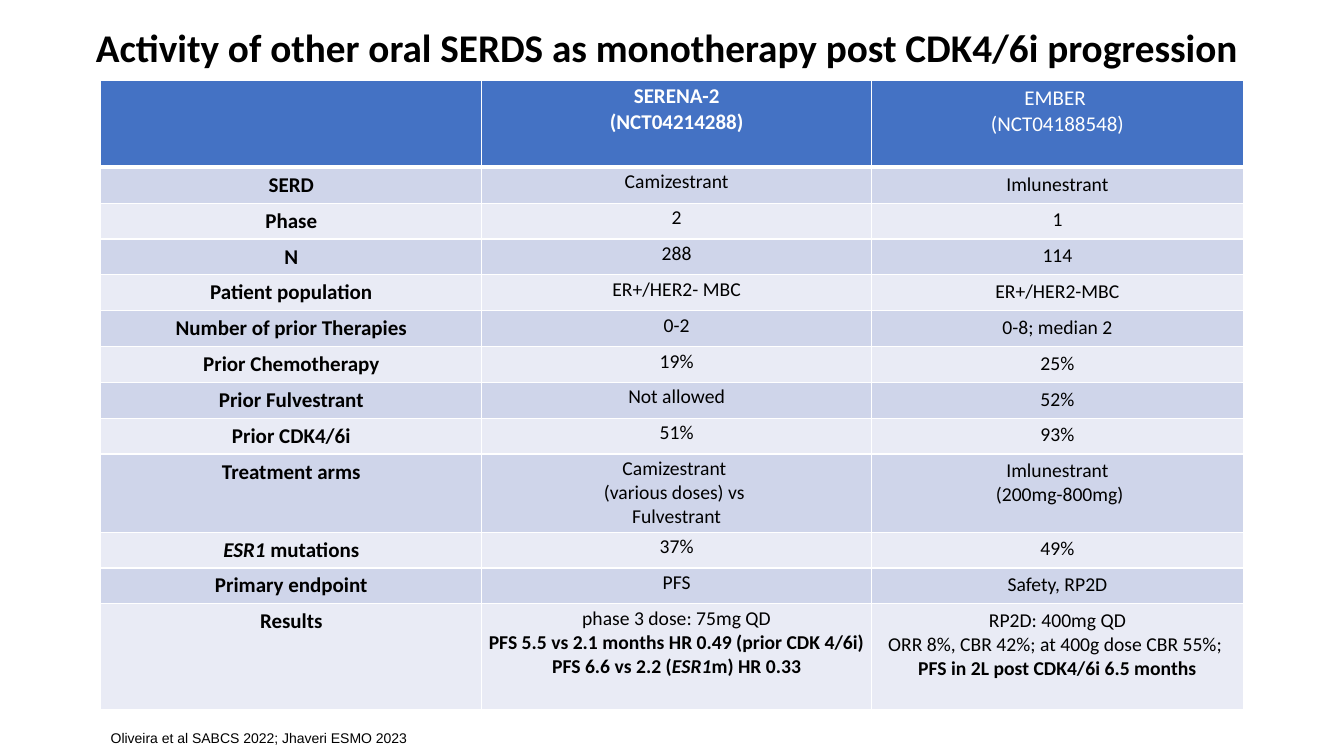
from lxml.etree import SubElement
from pptx import Presentation
from pptx.dml.color import RGBColor
from pptx.enum.text import MSO_AUTO_SIZE, PP_ALIGN
from pptx.oxml.ns import qn
from pptx.util import Inches, Pt

COLORS = {"text": "000000", "white": "FFFFFF", "header": "4472C4",
          "odd": "CFD5EA", "even": "E9EBF5"}
GRID_COLUMNS, GRID_ROWS = 40, 30

# A leading * makes a line bold; _..._ makes a part italic.
TRIALS = [
    ("", "*SERENA-2\n*(NCT04214288)", "EMBER \n(NCT04188548)"),
    ("*SERD", "Camizestrant", "Imlunestrant"),
    ("*Phase", "2", "1"),
    ("*N", "288", "114"),
    ("*Patient population", "ER+/HER2- MBC", "ER+/HER2-MBC"),
    ("*Number of prior Therapies", "0-2", "0-8; median 2"),
    ("*Prior Chemotherapy", "19%", "25%"),
    ("*Prior Fulvestrant", "Not allowed", "52%"),
    ("*Prior CDK4/6i", "51%", "93%"),
    ("*Treatment arms", "Camizestrant \n(various doses) vs \nFulvestrant",
     "Imlunestrant\n (200mg-800mg)"),
    ("*_ESR1 _mutations", "37%", "49%"),
    ("*Primary endpoint", "PFS", "Safety, RP2D"),
    ("*Results",
     "phase 3 dose: 75mg QD\n*PFS 5.5 vs 2.1 months HR 0.49 (prior CDK 4/6i)\n"
     "*PFS 6.6 vs 2.2 (_ESR1_m) HR 0.33",
     "RP2D: 400mg QD\nORR 8%, CBR 42%; at 400g dose CBR 55%; \n"
     "*PFS in 2L post CDK4/6i 6.5 months"),
]
COLUMN_WIDTHS = [11.34, 11.6, 11.07]
ROW_HEIGHTS = [3.44] + [1.42] * 8 + [3.1, 1.42, 1.42, 4.2]


class TrialSlide:
    def __init__(self, deck):
        self.slide = deck.slides.add_slide(deck.slide_layouts[6])
        self.column = deck.slide_width / GRID_COLUMNS
        self.row = deck.slide_height / GRID_ROWS

    def place(self, left, top, width, height):
        return (int(left * self.column), int(top * self.row),
                int(width * self.column), int(height * self.row))

    def style(self, run, size, color="text", font="Calibri", bold=False, italic=False):
        run.font.size = Pt(size)
        run.font.name = font
        run.font.bold = bold
        run.font.italic = italic
        run.font.color.rgb = RGBColor.from_string(COLORS[color])

    def text(self, words, box, size, align, wrap=True, **look):
        frame = self.slide.shapes.add_textbox(*self.place(*box)).text_frame
        frame.word_wrap = wrap
        frame.auto_size = MSO_AUTO_SIZE.SHAPE_TO_FIT_TEXT
        frame.text = words
        frame.paragraphs[0].alignment = align
        self.style(frame.paragraphs[0].runs[0], size, **look)

    def borders(self, cell, bottom):
        properties = cell._tc.get_or_add_tcPr()
        for side, width in zip("LRTB", (1, 1, 1, bottom)):
            line = SubElement(properties, qn(f"a:ln{side}"), w=str(Pt(width)))
            fill = SubElement(line, qn("a:solidFill"))
            SubElement(fill, qn("a:srgbClr"), val=COLORS["white"])

    def cell(self, cell, words, fill, size, color, tight, bottom):
        self.borders(cell, bottom)
        cell.fill.solid()
        cell.fill.fore_color.rgb = RGBColor.from_string(COLORS[fill])
        if tight:
            cell.margin_left = cell.margin_right = Inches(0.06)
            cell.margin_top = cell.margin_bottom = Inches(0.03)
        frame = cell.text_frame
        frame.text = words
        for paragraph, line in zip(frame.paragraphs, words.split("\n")):
            paragraph.alignment = PP_ALIGN.CENTER
            paragraph.text = ""
            for index, part in enumerate(line.removeprefix("*").split("_")):
                if part:
                    run = paragraph.add_run()
                    run.text = part
                    self.style(run, size, color, bold=line.startswith("*"),
                               italic=index % 2 == 1)

    def table(self, rows, left, top, widths, heights):
        box = self.place(left, top, sum(widths), sum(heights))
        table = self.slide.shapes.add_table(len(rows), len(widths), *box).table
        for column, width in zip(table.columns, widths):
            column.width = int(width * self.column)
        for r, (entries, height) in enumerate(zip(rows, heights)):
            table.rows[r].height = int(height * self.row)
            header = r == 0
            fill = "header" if header else "odd" if r % 2 else "even"
            for c, words in enumerate(entries):
                self.cell(table.cell(r, c), words, fill,
                          size=15 if header or c == 0 else 14,
                          color="white" if header else "text",
                          tight=c == 1, bottom=3 if header else 1)


def main():
    deck = Presentation()
    deck.slide_width, deck.slide_height = Inches(13.33), Inches(7.5)
    trials = TrialSlide(deck)

    # Trial comparison
    trials.table(TRIALS, 3, 3.2, COLUMN_WIDTHS, ROW_HEIGHTS)

    # Title
    trials.text("Activity of other oral SERDS as monotherapy post CDK4/6i progression ",
                (0.06, 0.72, 39.82, 2.28), 28, PP_ALIGN.CENTER, bold=True)

    # References
    trials.text("Oliveira et al SABCS 2022; Jhaveri ESMO 2023",
                (3, 28.76, 9.48, 1.08), 10, PP_ALIGN.LEFT, wrap=False, font="Arial")

    deck.save("out.pptx")


if __name__ == "__main__":
    main()
